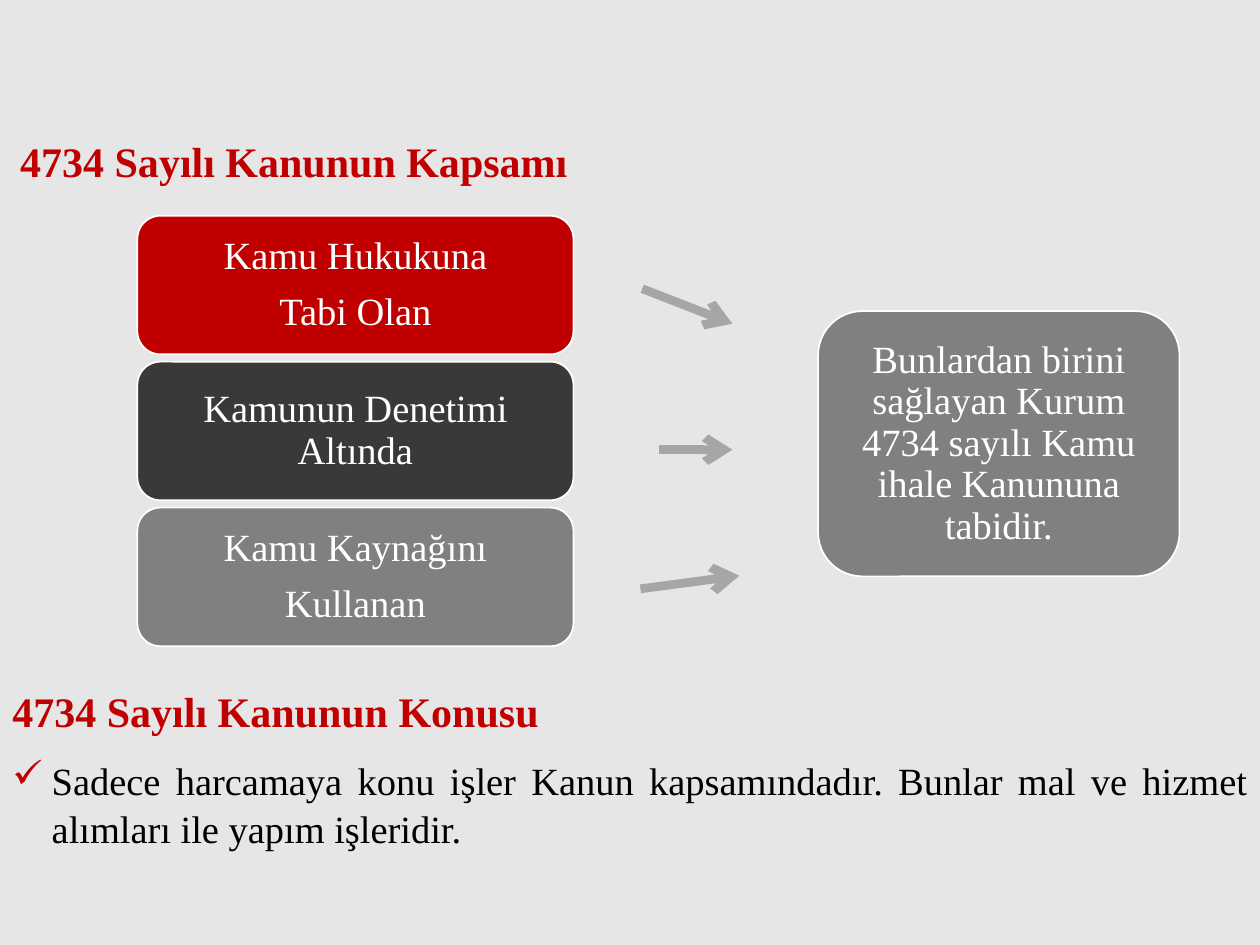
from lxml import etree
from pptx import Presentation
from pptx.dml.color import RGBColor
from pptx.enum import shapes, text
from pptx.oxml import parse_xml
from pptx.oxml.ns import nsdecls, qn
from pptx.util import Pt

FONT = "Times New Roman"
RED, DARK, GRAY, ARROW = "C00000", "3B3838", "808080", "A6A6A6"
CENTER, LEFT, JUSTIFY = text.PP_ALIGN.CENTER, text.PP_ALIGN.LEFT, text.PP_ALIGN.JUSTIFY


def write(sp, lines, size, color, align, bold=False, spacing=0.9, inset=7.2):
    """Fill a shape with formatted paragraphs."""
    tf = sp.text_frame
    tf.word_wrap = True
    tf.auto_size = text.MSO_AUTO_SIZE.NONE
    tf.margin_left = tf.margin_right = Pt(inset)
    tf.margin_top = tf.margin_bottom = Pt(3.6)
    tf.text = "\n".join(lines)
    for i, p in enumerate(tf.paragraphs):
        p.alignment = align
        p.line_spacing = spacing
        p.space_before = Pt(8 if i else 0)
        for r in p.runs:
            r.font.name, r.font.size, r.font.bold = FONT, Pt(size), bold
            r.font.color.rgb = RGBColor.from_string(color)


def add_box(x, y, w, h, fill, lines):
    sp = slide.shapes.add_shape(shapes.MSO_SHAPE.ROUNDED_RECTANGLE, Pt(x), Pt(y), Pt(w), Pt(h))
    sp.shadow.inherit = False
    sp.fill.solid()
    sp.fill.fore_color.rgb = RGBColor.from_string(fill)
    sp.line.color.rgb = RGBColor.from_string("FFFFFF")
    sp.line.width = Pt(1)
    write(sp, lines, 22, "FFFFFF", CENTER)
    sp.text_frame.vertical_anchor = text.MSO_ANCHOR.MIDDLE


prs = Presentation()
prs.slide_width, prs.slide_height = Pt(720), Pt(540)
slide = prs.slides.add_slide(prs.slide_layouts[5])
slide.background.fill.solid()
slide.background.fill.fore_color.rgb = RGBColor.from_string("E7E6E6")

# Headings
title = slide.shapes.title
title.left, title.top, title.width, title.height = Pt(0), Pt(77), Pt(720), Pt(34)
write(title, ["4734 Sayılı Kanunun Kapsamı"], 24, RED, LEFT, bold=True, inset=11.5)
title.text_frame.vertical_anchor = text.MSO_ANCHOR.TOP

subject = slide.shapes.add_textbox(Pt(0), Pt(391.7), Pt(720), Pt(34))
write(subject, ["4734 Sayılı Kanunun Konusu"], 24, RED, LEFT, bold=True)

# Conditions and their result
conditions = [
    (RED, ["Kamu Hukukuna", "Tabi Olan"]),
    (DARK, ["Kamunun Denetimi Altında"]),
    (GRAY, ["Kamu Kaynağını", "Kullanan"]),
]
for i, (fill, lines) in enumerate(conditions):
    add_box(78.5, 123.3 + i * 83.4, 249.2, 79.2, fill, lines)

add_box(467.5, 177.8, 206.6, 151.6, GRAY,
        ["Bunlardan birini sağlayan Kurum 4734 sayılı Kamu ihale Kanununa tabidir."])

for x1, y1, x2, y2 in [(367, 165, 418.5, 185), (376.5, 257, 418.5, 257), (366, 336.5, 422.5, 329)]:
    arrow = slide.shapes.add_connector(shapes.MSO_CONNECTOR.STRAIGHT, Pt(x1), Pt(y1), Pt(x2), Pt(y2))
    arrow.line.color.rgb = RGBColor.from_string(ARROW)
    arrow.line.width = Pt(5)
    etree.SubElement(arrow.line._get_or_add_ln(), qn("a:tailEnd"), type="arrow")
    etree.SubElement(arrow._element.spPr, qn("a:effectLst"))

# Check-marked statement
statement = slide.shapes.add_textbox(Pt(0), Pt(427.7), Pt(720), Pt(60.5))
write(statement, ["Sadece harcamaya konu işler Kanun kapsamındadır. "
                  "Bunlar mal ve hizmet alımları ile yapım işleridir."],
      22, "000000", JUSTIFY, spacing=1.05)
pPr = statement.text_frame.paragraphs[0]._p.get_or_add_pPr()
pPr.set("marL", str(Pt(22.5)))
pPr.set("indent", str(-Pt(22.5)))
pPr.append(parse_xml(f'<a:buClr {nsdecls("a")}><a:srgbClr val="{RED}"/></a:buClr>'))
etree.SubElement(pPr, qn("a:buChar"), char="✓")

prs.save("out.pptx")
